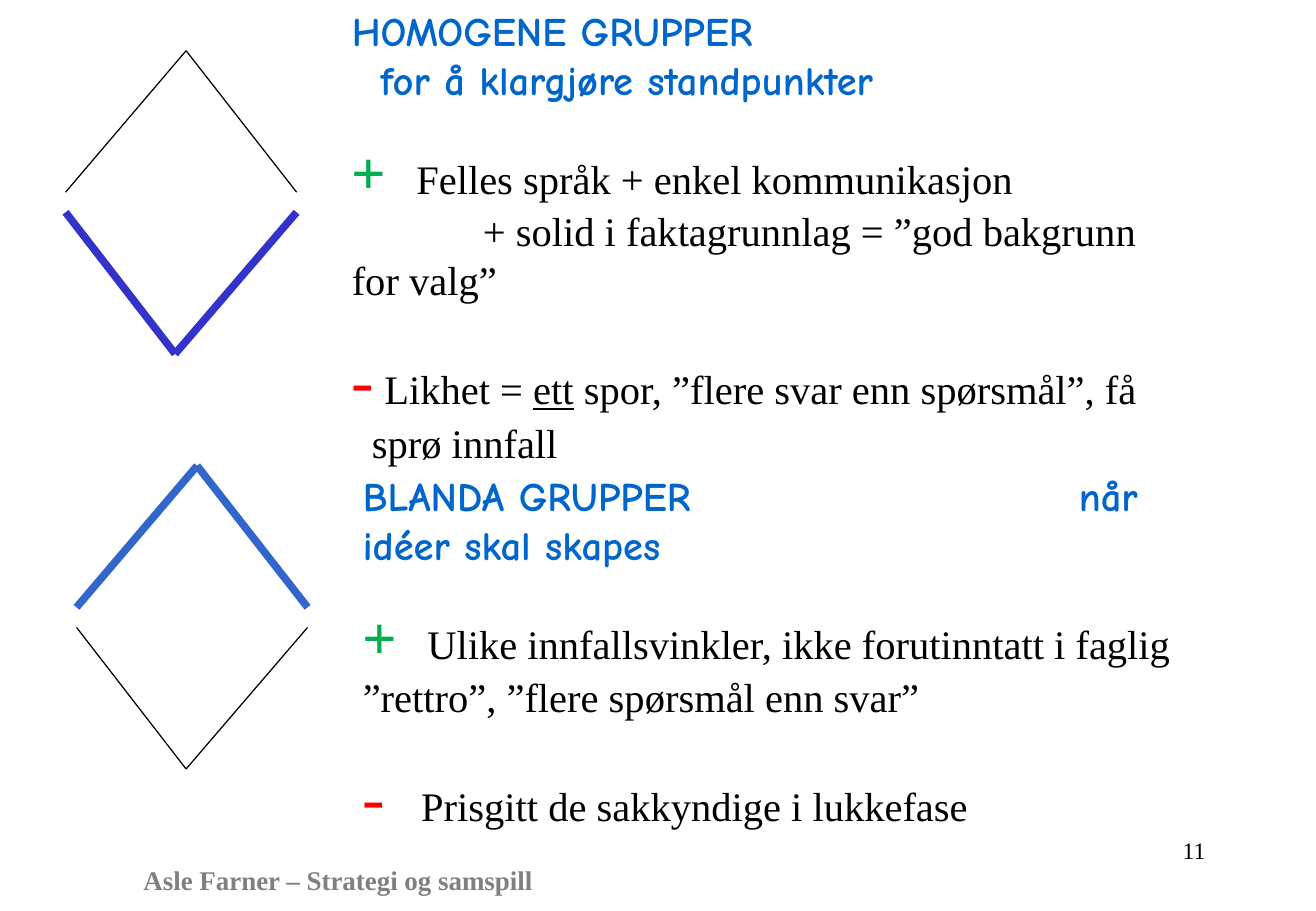
from lxml import etree
from pptx import Presentation
from pptx.dml.color import RGBColor
from pptx.enum.shapes import MSO_CONNECTOR
from pptx.enum.text import MSO_ANCHOR, MSO_AUTO_SIZE, PP_ALIGN
from pptx.oxml.ns import qn
from pptx.util import Cm, Pt

STRAIGHT = MSO_CONNECTOR.STRAIGHT
TOP = MSO_ANCHOR.TOP
NO_FIT = MSO_AUTO_SIZE.NONE
LEFT, RIGHT = PP_ALIGN.LEFT, PP_ALIGN.RIGHT

SERIF, COMIC = "Times New Roman", "Comic Neue"
BLACK, GREY, BLUE = "000000", "808080", "0066CC"
GREEN, RED = "00B050", "FF0000"
INDIGO, SKY = "3333CC", "3366CC"

PLUS_GAP, MINUS_GAP = 0.63, 0.71
PLUS_HANG, MINUS_HANG, WHEN_HANG = 1.35, 1.22, 14.97
DIAMOND_WIDTH, ARM_HEIGHT, VALLEY_DROP = 4.83, 2.96, 3.38
ROOF_APEX, VALLEY_APEX = 2.52, 2.29


def colour(value):
    return RGBColor.from_string(value)


def add_span(para, text, size=24, ink=BLACK, face=SERIF, bold=False, underline=False):
    span = para.add_run()
    span.text = text
    font = span.font
    font.size, font.name = Pt(size), face
    font.bold, font.underline = bold, underline
    font.color.rgb = colour(ink)


def add_heading(para, text):
    add_span(para, text, ink=BLUE, face=COMIC, bold=True)


def add_plus(para, text):
    add_span(para, "+", 36, GREEN, bold=True)
    add_span(para, "\t" + text)


def format_para(para, before=0, margin=0, indent=0):
    """Set spacing and indents in cm, without a bullet."""
    properties = para._p.get_or_add_pPr()
    properties.set("marL", str(Cm(margin)))
    properties.set("indent", str(Cm(indent)))
    etree.SubElement(properties, qn("a:buNone"))
    para.space_before = Cm(before)
    para.space_after = Pt(0)
    para.line_spacing = 1.0
    para.alignment = LEFT


def hang(para, margin, before=0):
    """Indent all but the first line, so that a tab leads to the margin."""
    format_para(para, before, margin, -margin)


def place_body(box, left, top, width, height):
    """Move a body placeholder and return its first paragraph."""
    box.left, box.top, box.width, box.height = Cm(left), Cm(top), Cm(width), Cm(height)
    frame = box.text_frame
    frame.word_wrap = True
    frame.auto_size = NO_FIT
    frame.vertical_anchor = TOP
    return frame.paragraphs[0]


def add_label(page, left, top, width, height, text, size, ink, bold=False, align=LEFT):
    box = page.shapes.add_textbox(Cm(left), Cm(top), Cm(width), Cm(height))
    box.text_frame.word_wrap = True
    para = box.text_frame.paragraphs[0]
    para.alignment = align
    add_span(para, text, size, ink, bold=bold)


def add_line(page, start, end, ink, weight):
    ends = [Cm(length) for length in (*start, *end)]
    line = page.shapes.add_connector(STRAIGHT, *ends)
    line.line.color.rgb = colour(ink)
    line.line.width = Pt(weight)
    etree.SubElement(line._element.spPr, qn("a:effectLst"))


def add_diamond(page, left, top, roof, valley):
    """Draw an open diamond; roof and valley are (colour, weight)."""
    right = left + DIAMOND_WIDTH
    valley_top = top + VALLEY_DROP
    peak = (left + ROOF_APEX, top)
    foot = (left + VALLEY_APEX, valley_top + ARM_HEIGHT)
    for side in (left, right):
        add_line(page, peak, (side, top + ARM_HEIGHT), *roof)
        add_line(page, (side, valley_top), foot, *valley)


def fill_homogeneous(box):
    para = place_body(box, 7.1, 0, 17.45, 9.25)
    format_para(para)
    add_heading(para, "HOMOGENE GRUPPER")
    para = box.text_frame.add_paragraph()
    format_para(para, margin=0.6)
    add_heading(para, "for å klargjøre standpunkter")

    para = box.text_frame.add_paragraph()
    hang(para, PLUS_HANG, PLUS_GAP)
    add_plus(para, "Felles språk + enkel kommunikasjon")
    para = box.text_frame.add_paragraph()
    format_para(para, indent=2.74)
    add_span(para, "+ solid i faktagrunnlag = ”god bakgrunn for valg”")

    para = box.text_frame.add_paragraph()
    hang(para, 0.42, MINUS_GAP)
    add_span(para, "-", 40, RED)
    add_span(para, " Likhet = ")
    add_span(para, "ett", underline=True)
    add_span(para, " spor, ”flere svar enn spørsmål”, få sprø innfall")


def fill_mixed(box):
    para = place_body(box, 7.33, 9.73, 17.5, 8.2)
    hang(para, WHEN_HANG)
    add_heading(para, "BLANDA GRUPPER\tnår")
    para = box.text_frame.add_paragraph()
    format_para(para)
    add_heading(para, "idéer skal skapes")

    para = box.text_frame.add_paragraph()
    hang(para, PLUS_HANG, PLUS_GAP)
    add_plus(para, "Ulike innfallsvinkler, ikke forutinntatt i faglig")
    para = box.text_frame.add_paragraph()
    format_para(para)
    add_span(para, "”rettro”, ”flere spørsmål enn svar”")

    para = box.text_frame.add_paragraph()
    hang(para, MINUS_HANG, MINUS_GAP)
    add_span(para, "-", 40, RED)
    add_span(para, "\tPrisgitt de sakkyndige i lukkefase")


def main():
    deck = Presentation()
    deck.slide_width, deck.slide_height = Cm(27.51), Cm(19.05)
    page = deck.slides.add_slide(deck.slide_layouts[3])
    title = page.shapes.title._element
    title.getparent().remove(title)

    add_label(page, 2.75, 17.93, 9.86, 0.84, "Asle Farner – Strategi og samspill",
              16, GREY, bold=True)
    add_label(page, 19.71, 17.35, 5.74, 1.27, "11", 14, BLACK, align=RIGHT)
    fill_homogeneous(page.placeholders[1])
    fill_mixed(page.placeholders[2])
    add_diamond(page, 1.37, 1.06, (BLACK, 0.75), (INDIGO, 4.5))
    add_diamond(page, 1.6, 9.74, (SKY, 4.5), (BLACK, 0.75))
    deck.save("out.pptx")


if __name__ == "__main__":
    main()
